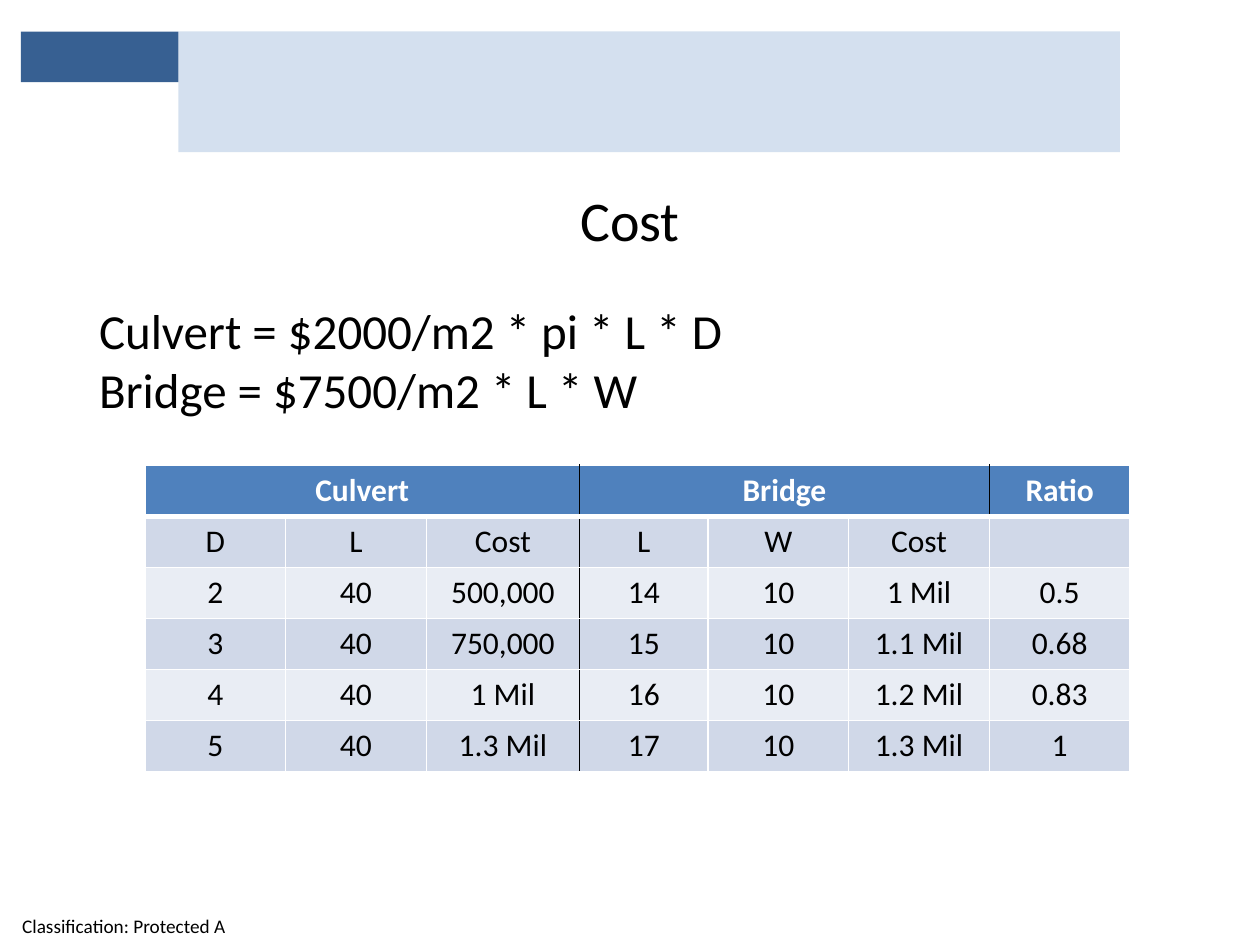
from dataclasses import dataclass
from typing import NamedTuple

from lxml.etree import SubElement
from pptx import Presentation
from pptx.dml.color import RGBColor
from pptx.enum.shapes import MSO_SHAPE as Preset
from pptx.enum.text import MSO_ANCHOR as Anchor, PP_ALIGN as Align
from pptx.oxml.ns import qn
from pptx.util import Pt


@dataclass(frozen=True)
class Theme:
    font: str = "Calibri"
    accent: str = "4F81BD"
    accent_dark: str = "376092"
    odd_row: str = "D0D8E8"
    even_row: str = "E9EDF4"
    dark: str = "000000"
    light: str = "FFFFFF"
    title_size: float = 32
    formula_size: float = 28
    table_size: float = 18
    footer_size: float = 11
    thin: float = 1
    thick: float = 3


class Box(NamedTuple):
    left: float
    top: float
    width: float
    height: float

    def lengths(self) -> list:
        return [Pt(value) for value in self]


class Banner(NamedTuple):
    box: Box
    color: str
    opacity: int


class Label(NamedTuple):
    box: Box
    lines: tuple
    size: float
    align: Align = Align.LEFT
    anchor: Anchor = Anchor.TOP
    wrap: bool = True
    margins: tuple = (7.2, 3.6, 7.2, 3.6)


THEME = Theme()

BANNERS = (
    Banner(Box(102, 18, 538, 69), THEME.accent, 24),
    Banner(Box(12, 18, 90, 29), THEME.accent_dark, 100),
)

LABELS = (
    Label(Box(0, 518, 142, 22), ("Classification: Protected A",),
          THEME.footer_size, anchor=Anchor.MIDDLE, wrap=False,
          margins=(12.6, 0, 0, 0)),
    Label(Box(0, 102.4, 720, 46), ("Cost",), THEME.title_size, Align.CENTER),
    Label(Box(49.5, 168, 375, 75),
          ("Culvert = $2000/m2 * pi * L * D", "Bridge = $7500/m2 * L * W"),
          THEME.formula_size, wrap=False),
)

TABLE_LEFT, TABLE_TOP, ROW_HEIGHT = 82.8, 265.8, 29.2
COLUMN_WIDTHS = (80.4, 80.4, 87.6, 73.4, 80.4, 80.4, 80.4)
HEADER_SPANS = ((0, 2), (3, 5))
HEADER_DIVIDERS = (3, 6)
BODY_DIVIDERS = (3,)
ROWS = (
    ("Culvert", "", "", "Bridge", "", "", "Ratio"),
    ("D", "L", "Cost", "L", "W", "Cost", ""),
    ("2", "40", "500,000", "14", "10", "1 Mil", "0.5"),
    ("3", "40", "750,000", "15", "10", "1.1 Mil", "0.68"),
    ("4", "40", "1 Mil", "16", "10", "1.2 Mil", "0.83"),
    ("5", "40", "1.3 Mil", "17", "10", "1.3 Mil", "1"),
)


def set_font(paragraph, size: float, color: str, bold: bool = False) -> None:
    font = paragraph.font
    font.name, font.size, font.bold = THEME.font, Pt(size), bold
    font.color.rgb = RGBColor.from_string(color)


def add_banner(slide, banner: Banner) -> None:
    shape = slide.shapes.add_shape(Preset.RECTANGLE, *banner.box.lengths())
    shape.shadow.inherit = False
    shape.line.fill.background()
    shape.fill.solid()
    shape.fill.fore_color.rgb = RGBColor.from_string(banner.color)
    if banner.opacity < 100:
        color = shape.fill._xPr.find(".//" + qn("a:srgbClr"))
        SubElement(color, qn("a:alpha"), val=str(banner.opacity * 1000))


def add_label(slide, label: Label) -> None:
    frame = slide.shapes.add_textbox(*label.box.lengths()).text_frame
    frame.word_wrap = label.wrap
    frame.vertical_anchor = label.anchor
    (frame.margin_left, frame.margin_top,
     frame.margin_right, frame.margin_bottom) = map(Pt, label.margins)
    frame.text = "\n".join(label.lines)
    for paragraph in frame.paragraphs:
        paragraph.alignment = label.align
        set_font(paragraph, label.size, THEME.dark)


def add_border(cell, side: str, color: str, width: float) -> None:
    line = SubElement(cell._tc.get_or_add_tcPr(), qn(f"a:ln{side}"),
                      w=str(Pt(width)))
    fill = SubElement(line, qn("a:solidFill"))
    SubElement(fill, qn("a:srgbClr"), val=color)


def style_cell(cell, row: int, column: int) -> None:
    """Set borders before the fill, as the cell schema orders them."""
    is_header = row == 0
    dividers = HEADER_DIVIDERS if is_header else BODY_DIVIDERS
    last_column = column + (cell.span_width if cell.is_merge_origin else 1)
    for side, edge in (("L", column), ("R", last_column)):
        color = THEME.dark if edge in dividers else THEME.light
        add_border(cell, side, color, THEME.thin)
    for side, edge in (("T", row), ("B", row + 1)):
        width = THEME.thick if edge == 1 else THEME.thin
        add_border(cell, side, THEME.light, width)

    band = THEME.odd_row if row % 2 else THEME.even_row
    cell.fill.solid()
    cell.fill.fore_color.rgb = RGBColor.from_string(
        THEME.accent if is_header else band)
    paragraph = cell.text_frame.paragraphs[0]
    paragraph.alignment = Align.CENTER
    set_font(paragraph, THEME.table_size,
             THEME.light if is_header else THEME.dark, bold=is_header)


def add_cost_table(slide) -> None:
    box = Box(TABLE_LEFT, TABLE_TOP, sum(COLUMN_WIDTHS),
              ROW_HEIGHT * len(ROWS))
    table = slide.shapes.add_table(
        len(ROWS), len(COLUMN_WIDTHS), *box.lengths()).table
    for column, width in zip(table.columns, COLUMN_WIDTHS):
        column.width = Pt(width)
    for first, last in HEADER_SPANS:
        table.cell(0, first).merge(table.cell(0, last))
    for row, texts in enumerate(ROWS):
        table.rows[row].height = Pt(ROW_HEIGHT)
        for column, text in enumerate(texts):
            cell = table.cell(row, column)
            cell.text = text
            style_cell(cell, row, column)


def main() -> None:
    presentation = Presentation()
    presentation.slide_width, presentation.slide_height = Pt(720), Pt(540)
    slide = presentation.slides.add_slide(presentation.slide_layouts[6])
    for banner in BANNERS:
        add_banner(slide, banner)
    for label in LABELS:
        add_label(slide, label)
    add_cost_table(slide)
    presentation.save("out.pptx")


if __name__ == "__main__":
    main()
